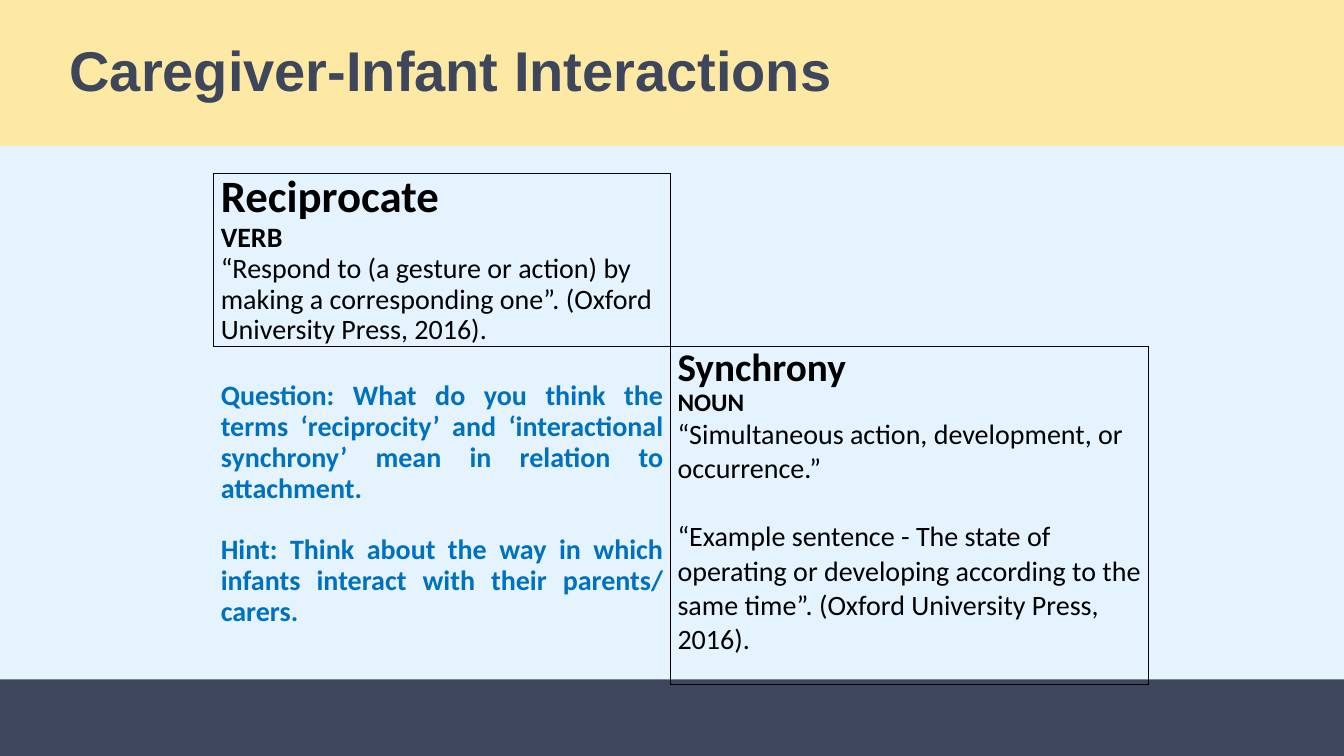
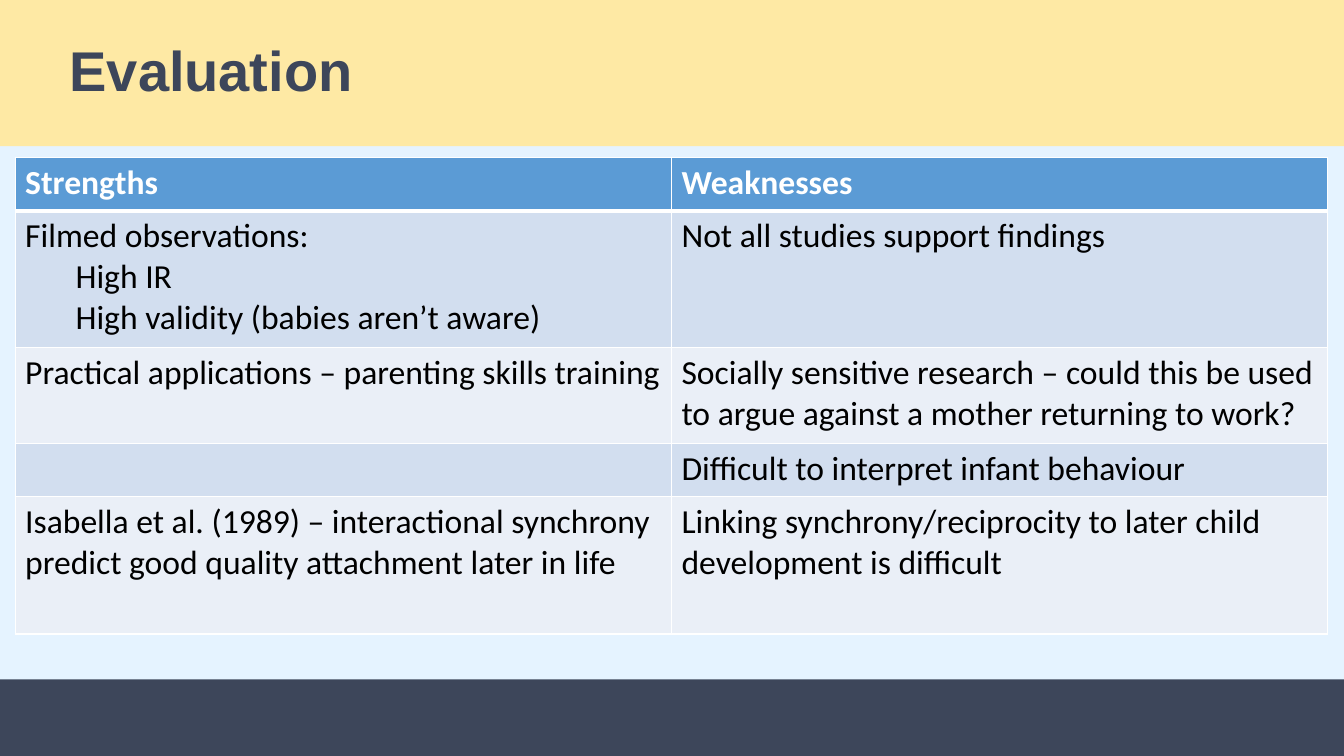
from dataclasses import dataclass

from lxml.etree import SubElement
from pptx import Presentation
from pptx.dml.color import RGBColor
from pptx.enum.shapes import MSO_SHAPE as Shape
from pptx.enum.text import MSO_ANCHOR as Anchor, MSO_AUTO_SIZE as AutoSize, PP_ALIGN as Align
from pptx.oxml.ns import qn
from pptx.util import Inches, Pt

SKY, CREAM, NAVY = "E5F3FF", "FEE9A4", "3D465A"
BLACK, WHITE, QUESTION_BLUE = "000000", "FFFFFF", "0070C0"
HEADER_BLUE, BANDS = "5B9BD5", ("D2DEEF", "EAEFF7")
HEADING_FONT, BODY_FONT = "Arial", "Calibri"
WIDTH, HEIGHT = 13.33, 7.5


def rgb(value):
    return RGBColor.from_string(value)


@dataclass
class Line:
    """One paragraph of text."""
    text: str
    size: float = 20
    bold: bool = False
    color: str = BLACK
    spacing: float = 0.9
    before: float = 0
    align: Align = Align.LEFT
    indent: float = 0


class Deck:
    """Holds the shared style and the current slide."""

    def __init__(self):
        self.prs = Presentation()
        self.prs.slide_width, self.prs.slide_height = Inches(WIDTH), Inches(HEIGHT)
        backdrop = self.prs.slide_master.background.fill
        backdrop.solid()
        backdrop.fore_color.rgb = rgb(SKY)
        self.slide = None

    def add_slide(self, heading):
        self.slide = self.prs.slides.add_slide(self.prs.slide_layouts[5])
        self.footer_band()
        self.title(heading)

    def footer_band(self):
        band = self.slide.shapes.add_shape(
            Shape.RECTANGLE, 0, Inches(6.74), Inches(WIDTH), Inches(HEIGHT - 6.74))
        band.shadow.inherit = False
        band.fill.solid()
        band.fill.fore_color.rgb = rgb(NAVY)
        band.line.fill.background()

    def title(self, heading):
        title = self.slide.shapes.title
        title.left, title.top = 0, 0
        title.width, title.height = Inches(WIDTH), Inches(1.45)
        title.fill.solid()
        title.fill.fore_color.rgb = rgb(CREAM)
        frame = title.text_frame
        frame.auto_size, frame.vertical_anchor = AutoSize.NONE, Anchor.MIDDLE
        self.set_lines(frame, [Line(heading, 40, True, NAVY, indent=0.59)], HEADING_FONT)

    def set_lines(self, frame, lines, font_name=BODY_FONT):
        for index, line in enumerate(lines):
            para = frame.paragraphs[0] if index == 0 else frame.add_paragraph()
            para.text = line.text
            para.alignment, para.line_spacing = line.align, line.spacing
            para.space_before = Pt(line.before)
            if line.indent:
                props = para._p.get_or_add_pPr()
                props.set("marL", str(Inches(line.indent)))
                props.set("indent", "0")
            font = para.font
            font.name, font.size, font.bold = font_name, Pt(line.size), line.bold
            font.color.rgb = rgb(line.color)

    def table(self, left, top, widths, heights):
        frame = self.slide.shapes.add_table(
            len(heights), len(widths), Inches(left), Inches(top),
            Inches(sum(widths)), Inches(sum(heights)))
        table = frame.table
        table.first_row = table.horz_banding = False
        for column, width in zip(table.columns, widths):
            column.width = Inches(width)
        for row, height in zip(table.rows, heights):
            row.height = Inches(height)
        return table

    def cell(self, cell, lines, border_color, borders, fill=None):
        """Borders map the sides L, R, T and B to widths; a missing side has no line."""
        props = cell._tc.get_or_add_tcPr()
        for side in "LRTB":
            edge = SubElement(props, qn(f"a:ln{side}"))
            if side in borders:
                edge.set("w", str(Pt(borders[side])))
                paint = SubElement(edge, qn("a:solidFill"))
                SubElement(paint, qn("a:srgbClr")).set("val", border_color)
            else:
                SubElement(edge, qn("a:noFill"))
        if fill:
            cell.fill.solid()
            cell.fill.fore_color.rgb = rgb(fill)
        else:
            cell.fill.background()
        self.set_lines(cell.text_frame, lines)


def definitions_slide(deck):
    deck.add_slide("Caregiver-Infant Interactions")
    reciprocate = [
        Line("Reciprocate", 32, True),
        Line("VERB", bold=True),
        Line("“Respond to (a gesture or action) by making a corresponding one”. "
             "(Oxford University Press, 2016)."),
    ]
    prompt = dict(bold=True, color=QUESTION_BLUE, align=Align.JUSTIFY)
    question = [
        Line("Question: What do you think the terms ‘reciprocity’ and ‘interactional "
             "synchrony’ mean in relation to attachment.", **prompt),
        Line("Hint: Think about the way in which infants interact with their "
             "parents/ carers.", before=22, **prompt),
    ]
    synchrony = [
        Line("Synchrony", 28, True),
        Line("NOUN", 18, True),
        Line("“Simultaneous action, development, or occurrence.”", spacing=1),
        Line("“Example sentence - The state of operating or developing according to "
             "the same time”. (Oxford University Press, 2016).", spacing=1, before=24.4),
    ]
    # Definitions sit on the diagonal; the other two cells stay open outside
    grid = [[(reciprocate, "LRTB"), ([], "LB")],
            [(question, "TR"), (synchrony, "LRTB")]]
    table = deck.table(2.12, 1.72, (4.53, 4.74), (1.72, 3.35))
    for r, row in enumerate(grid):
        for c, (lines, sides) in enumerate(row):
            cell = table.cell(r, c)
            cell.margin_left = cell.margin_right = Inches(0.07)
            cell.margin_top = Inches(0.34 if lines is question else 0)
            cell.margin_bottom = 0
            deck.cell(cell, lines, BLACK, dict.fromkeys(sides, 1))


def evaluation_slide(deck):
    deck.add_slide("Evaluation")
    # Each cell lists its paragraphs; those after the first are indented
    rows = [
        (["Strengths"], ["Weaknesses"]),
        (["Filmed observations:", "High IR", "High validity (babies aren’t aware)"],
         ["Not all studies support findings"]),
        (["Practical applications – parenting skills training"],
         ["Socially sensitive research – could this be used to argue against a mother "
          "returning to work?"]),
        ([], ["Difficult to interpret infant behaviour"]),
        (["Isabella et al. (1989) – interactional synchrony predict good quality "
          "attachment later in life"],
         ["Linking synchrony/reciprocity to later child development is difficult"]),
    ]
    table = deck.table(0.15, 1.56, (6.51, 6.51), (0.53, 1.36, 0.95, 0.53, 1.36))
    for r, row in enumerate(rows):
        header = r == 0
        fill = HEADER_BLUE if header else BANDS[(r - 1) % 2]
        borders = dict(L=1, R=1, T=3 if r == 1 else 1, B=3 if header else 1)
        for c, texts in enumerate(row):
            lines = [Line(text, 24, header, WHITE if header else BLACK, 1,
                          indent=0.5 if i else 0) for i, text in enumerate(texts)]
            deck.cell(table.cell(r, c), lines, WHITE, borders, fill)


def main():
    deck = Deck()
    definitions_slide(deck)
    evaluation_slide(deck)
    deck.prs.save("out.pptx")


if __name__ == "__main__":
    main()
